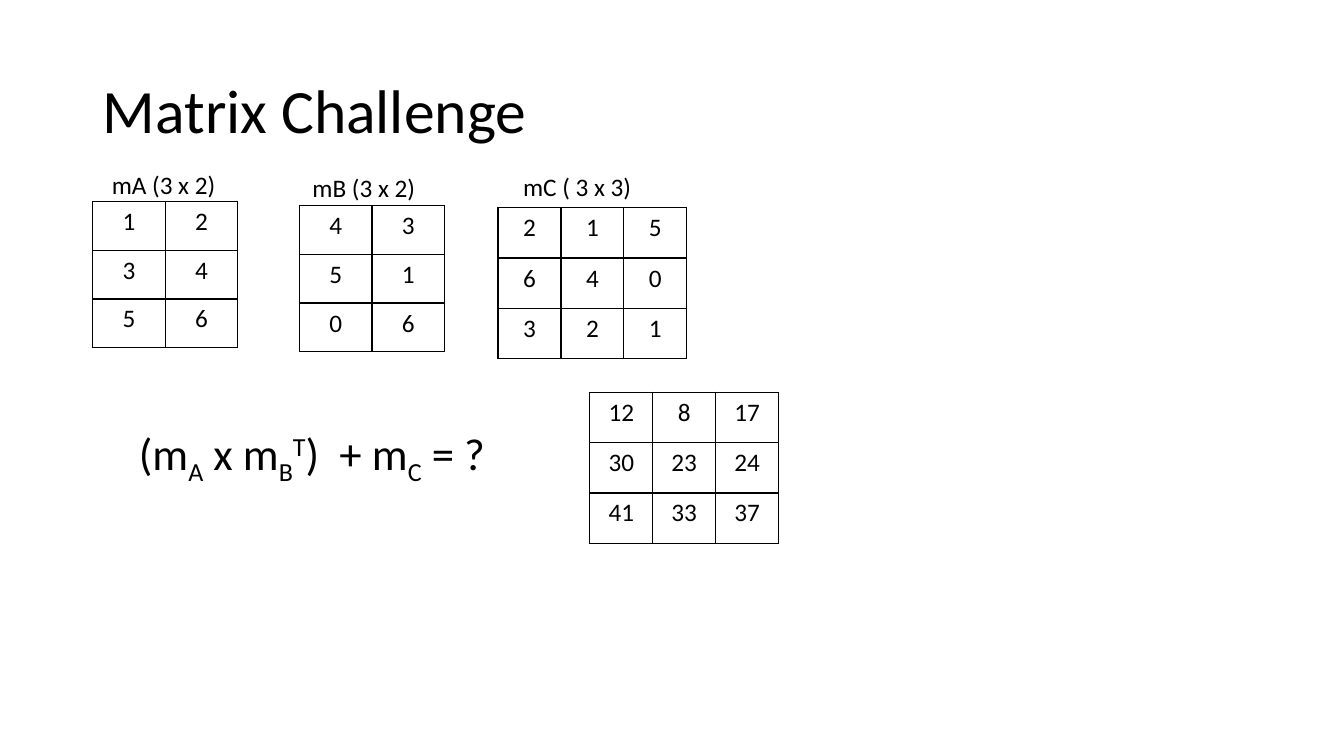
import pptx
import pptx.dml.color
import pptx.enum.text
import pptx.oxml
import pptx.oxml.ns
import pptx.util

BLACK = pptx.dml.color.RGBColor(0, 0, 0)
WIDTH = pptx.util.Inches(13.33)
HEIGHT = pptx.util.Inches(7.5)
ALIGN = pptx.enum.text.PP_ALIGN
ANCHOR = pptx.enum.text.MSO_ANCHOR
FIT = pptx.enum.text.MSO_AUTO_SIZE
SUBSCRIPT, SUPERSCRIPT = -25, 30

# Left, top, cell width and cell height in percent of the slide, then values
MATRICES = [
    ((6.9, 26.67, 5.4, 6.44), [(1, 2), (3, 4), (5, 6)]),
    ((22.28, 27.2, 5.4, 6.44), [(4, 3), (5, 1), (0, 6)]),
    ((37.06, 27.47, 4.68, 6.67), [(2, 1, 5), (6, 4, 0), (3, 2, 1)]),
    ((43.89, 51.87, 4.68, 6.67), [(12, 8, 17), (30, 23, 24), (41, 33, 37)]),
]

# Left, top, width and height in percent of the slide, then wording
LABELS = [
    ((7.58, 21.73, 9.3, 5.33), "mA (3 x 2)"),
    ((22.51, 22.13, 9.23, 5.33), "mB (3 x 2)"),
    ((38.18, 22, 9.68, 5.33), "mC ( 3 x 3)"),
]

FORMULA = [
    ("(m", 0), ("A", SUBSCRIPT), (" x m", 0), ("B", SUBSCRIPT),
    ("T", SUPERSCRIPT), (")  + m", 0), ("C", SUBSCRIPT), (" = ?", 0),
]


def apply(target, values):
    for name, value in values.items():
        setattr(target, name, value)


def area(left, top, width, height):
    """Turn percentages of the slide into lengths."""
    return [pptx.util.Emu(round(share * side / 100)) for share, side in
            zip((left, top, width, height), (WIDTH, HEIGHT) * 2)]


def add_span(para, text, size, baseline=0):
    span = para.add_run()
    span.text = text
    apply(span.font, {"name": "Calibri", "size": pptx.util.Pt(size)})
    span.font.color.rgb = BLACK
    if baseline:
        span.font._element.set("baseline", str(baseline * 1000))


def set_title(page, text):
    title = page.shapes.title
    places = area(6.9, 5.33, 86.27, 19.33)
    apply(title, dict(zip(("left", "top", "width", "height"), places)))
    apply(title.text_frame, {"vertical_anchor": ANCHOR.MIDDLE,
                             "word_wrap": True, "auto_size": FIT.NONE})
    para = title.text_frame.paragraphs[0]
    apply(para, {"alignment": ALIGN.LEFT, "line_spacing": 0.9})
    add_span(para, text, 44)


def add_text(page, place, spans, size, wrap):
    box = page.shapes.add_textbox(*area(*place))
    apply(box.text_frame, {"word_wrap": wrap,
                           "auto_size": FIT.SHAPE_TO_FIT_TEXT})
    for text, baseline in spans:
        add_span(box.text_frame.paragraphs[0], text, size, baseline)


def outline_cell(cell):
    properties = cell._tc.get_or_add_tcPr()
    for index, side in enumerate("LRTB"):
        border = pptx.oxml.parse_xml(
            f'<a:ln{side} {pptx.oxml.ns.nsdecls("a")} w="12700">'
            f'<a:solidFill><a:srgbClr val="{BLACK}"/></a:solidFill>'
            f'</a:ln{side}>')
        properties.insert(index, border)


def add_matrix(page, place, values):
    left, top, cell_width, cell_height = area(*place)
    rows, columns = len(values), len(values[0])
    table = page.shapes.add_table(rows, columns, left, top,
                                  cell_width * columns,
                                  cell_height * rows).table
    apply(table, {"first_row": False, "horz_banding": False})
    for row, numbers in enumerate(values):
        for column, number in enumerate(numbers):
            cell = table.cell(row, column)
            cell.fill.background()
            outline_cell(cell)
            para = cell.text_frame.paragraphs[0]
            para.alignment = ALIGN.CENTER
            add_span(para, str(number), 18)


def main():
    deck = pptx.Presentation()
    apply(deck, {"slide_width": WIDTH, "slide_height": HEIGHT})
    page = deck.slides.add_slide(deck.slide_layouts.get_by_name("Title Only"))

    # Heading
    set_title(page, "Matrix Challenge")

    # Given matrices and the result
    for place, values in MATRICES:
        add_matrix(page, place, values)
    for place, text in LABELS:
        add_text(page, place, [(text, 0)], 18, wrap=False)

    # Question
    add_text(page, (9.6, 55.6, 36.08, 8.53), FORMULA, 32, wrap=True)

    deck.save("out.pptx")


if __name__ == "__main__":
    main()
